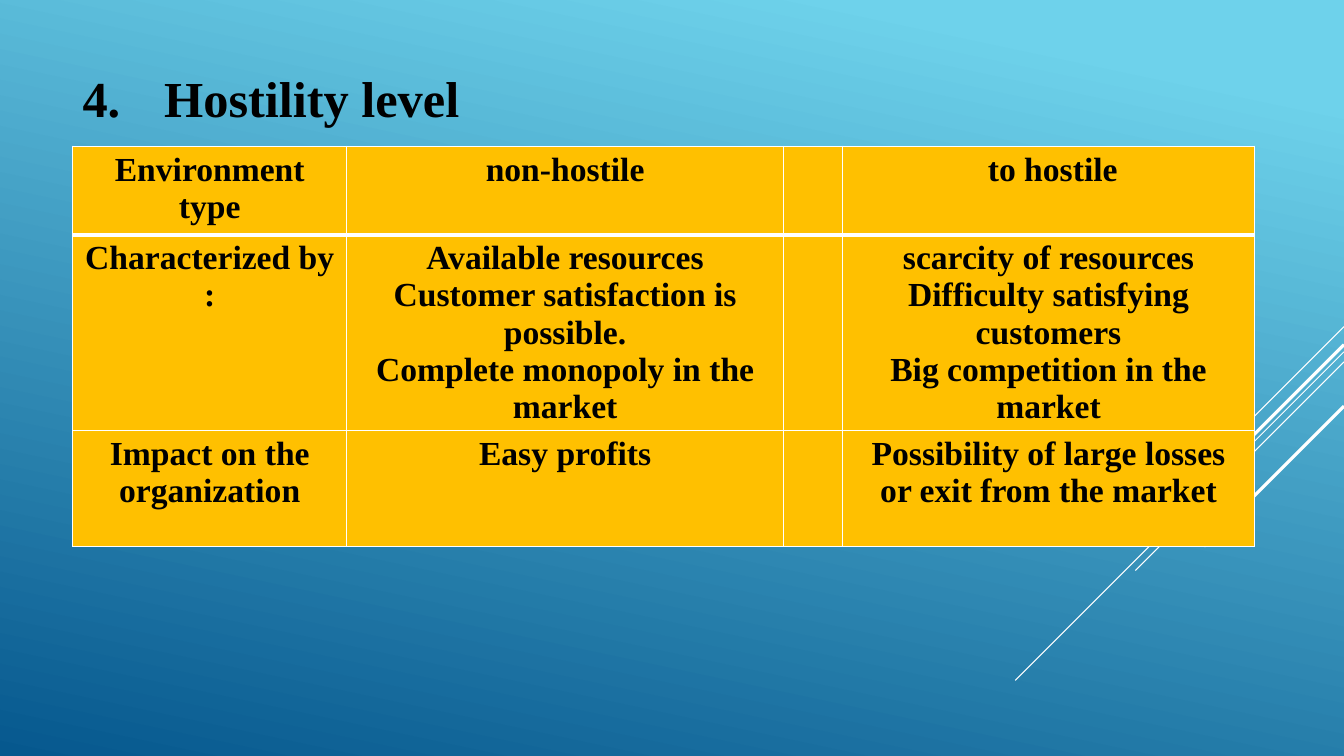
from lxml import etree
from pptx import Presentation
from pptx.dml.color import RGBColor
from pptx.enum import shapes, text
from pptx.oxml.ns import qn
from pptx.util import Inches, Pt

COLORS = {"sky": "6ED2EB", "deep": "06588E", "white": "FFFFFF",
          "amber": "FFC000", "black": "000000"}


def rgb(name):
    return RGBColor.from_string(COLORS[name])


def add_text(p, content, size=24, color="black", bold=True, align=None):
    p.alignment = align
    r = p.add_run()
    r.text = content
    r.font.name = "Times New Roman"
    r.font.size = Pt(size)
    r.font.bold = bold
    r.font.color.rgb = rgb(color)


prs = Presentation()
prs.slide_width, prs.slide_height = Inches(13.33), Inches(7.5)
s = prs.slides.add_slide(prs.slide_layouts[6])

bg = s.background.fill
bg.gradient()
bg.gradient_angle = 360 - 102
for stop, (position, name) in zip(bg.gradient_stops, [(0.1, "sky"), (1, "deep")]):
    stop.position = position
    stop.color.rgb = rgb(name)

right_edge = 13.33
diagonals = [(3.24, 1, 0.75), (3.49, 3.26, 0.75), (3.59, 2.07, 0.75),
             (3.42, 1.91, 2.25), (4.03, 1.39, 2.25)]
for top, run, width in diagonals:
    line = s.shapes.add_connector(
        shapes.MSO_CONNECTOR.STRAIGHT, Inches(right_edge), Inches(top),
        Inches(right_edge - run), Inches(top + run))
    line.line.color.rgb = rgb("white")
    line.line.width = Pt(width)
    etree.SubElement(line._element.spPr, qn("a:effectLst"))

col_widths = [2.72, 4.33, 0.59, 4.08]
row_heights = [0.88, 1.7, 1.15]
rows = [
    [["Environment type"], ["non-hostile"], [], [" to hostile"]],
    [["Characterized by :"],
     ["Available resources", "Customer satisfaction is possible.",
      "Complete monopoly in the market"],
     [],
     ["scarcity of resources", "Difficulty satisfying customers",
      "Big competition in the market"]],
    [["Impact on the organization"], ["Easy profits"], [],
     ["Possibility of large losses or exit from the market"]],
]
table = s.shapes.add_table(
    len(rows), len(col_widths), Inches(0.72), Inches(1.45),
    Inches(sum(col_widths)), Inches(sum(row_heights))).table
for column, width in zip(table.columns, col_widths):
    column.width = Inches(width)
for i, (height, row) in enumerate(zip(row_heights, rows)):
    table.rows[i].height = Inches(height)
    for j, lines in enumerate(row):
        cell = table.cell(i, j)
        tcPr = cell._tc.get_or_add_tcPr()
        borders = {"lnL": 1, "lnR": 1, "lnT": 3 if i == 1 else 1, "lnB": 3 if i == 0 else 1}
        for tag, width in borders.items():
            ln = etree.SubElement(tcPr, qn(f"a:{tag}"), w=str(Pt(width)))
            fill = etree.SubElement(ln, qn("a:solidFill"))
            etree.SubElement(fill, qn("a:srgbClr"), val=COLORS["white"])
        cell.fill.solid()
        cell.fill.fore_color.rgb = rgb("amber")
        tf = cell.text_frame
        for k, content in enumerate(lines):
            p = tf.add_paragraph() if k else tf.paragraphs[0]
            add_text(p, content, align=text.PP_ALIGN.CENTER)

title = s.shapes.add_textbox(Inches(0.72), Inches(0.62), Inches(7.12), Inches(0.71))
tf = title.text_frame
tf.word_wrap = True
tf.auto_size = text.MSO_AUTO_SIZE.SHAPE_TO_FIT_TEXT
p = tf.paragraphs[0]
pPr = p._p.get_or_add_pPr()
pPr.set("marL", str(Inches(0.81)))
pPr.set("indent", str(Inches(-0.81)))
etree.SubElement(pPr, qn("a:buAutoNum"), type="arabicPeriod", startAt="4")
add_text(p, "Hostility level", size=36)

prs.save("out.pptx")
